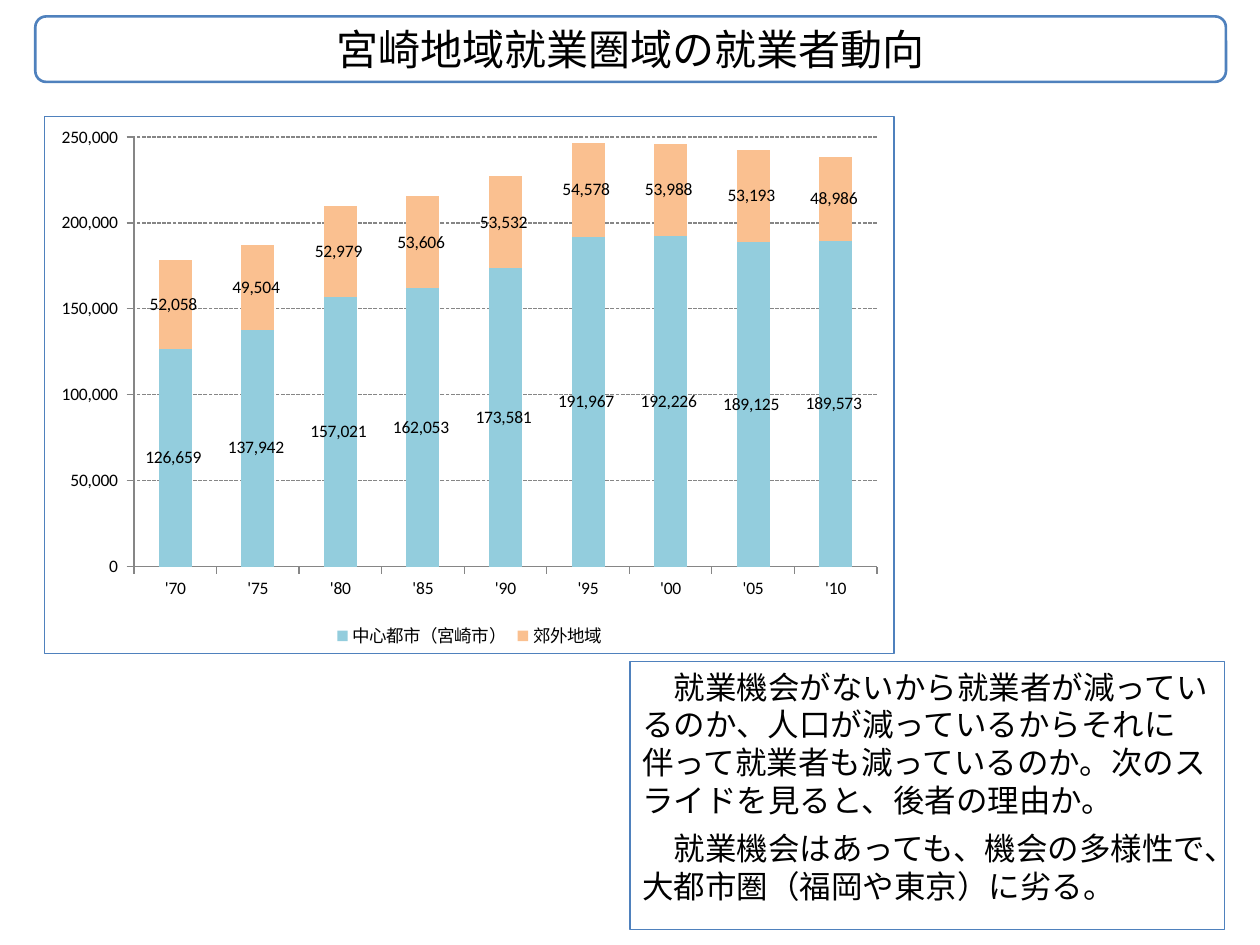
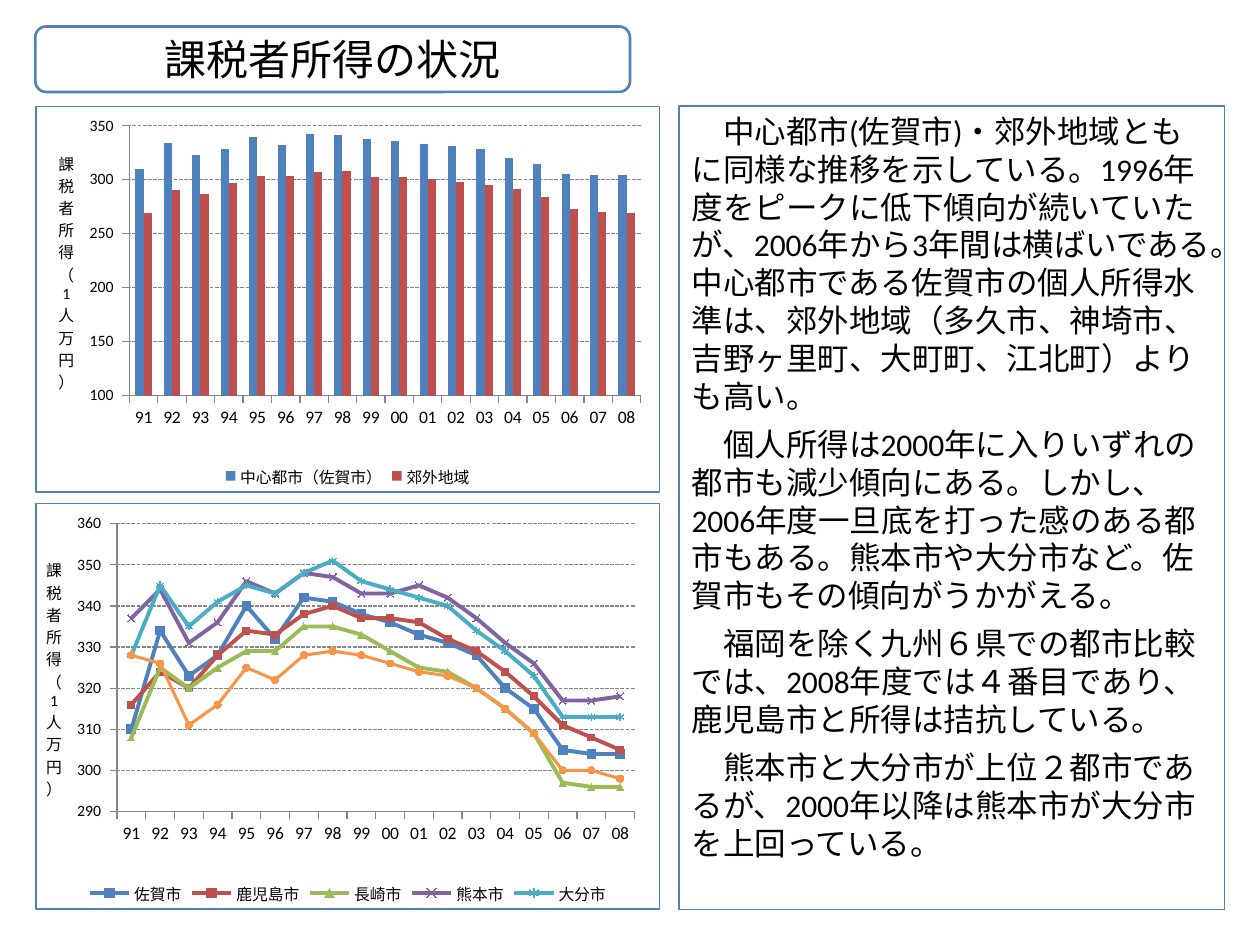
from dataclasses import dataclass

from lxml import etree
from pptx import Presentation
from pptx.chart.data import CategoryChartData
from pptx.dml.color import RGBColor
from pptx.enum.chart import XL_CHART_TYPE, XL_LEGEND_POSITION, XL_MARKER_STYLE, XL_TICK_MARK
from pptx.enum.dml import MSO_LINE
from pptx.enum.shapes import MSO_SHAPE
from pptx.enum.text import MSO_ANCHOR, MSO_AUTO_SIZE, PP_ALIGN
from pptx.oxml import parse_xml
from pptx.oxml.ns import nsdecls, qn
from pptx.util import Inches, Pt

STACKED = XL_CHART_TYPE.COLUMN_STACKED
CLUSTERED = XL_CHART_TYPE.COLUMN_CLUSTERED
LINES = XL_CHART_TYPE.LINE_MARKERS
OUTSIDE, NO_TICK = XL_TICK_MARK.OUTSIDE, XL_TICK_MARK.NONE
LEGEND_BOTTOM = XL_LEGEND_POSITION.BOTTOM
DASH = MSO_LINE.SQUARE_DOT
ROUNDED, SQUARED = MSO_SHAPE.ROUNDED_RECTANGLE, MSO_SHAPE.RECTANGLE
TOP, MIDDLE = MSO_ANCHOR.TOP, MSO_ANCHOR.MIDDLE
LEFT, CENTER = PP_ALIGN.LEFT, PP_ALIGN.CENTER
NO_AUTOFIT = MSO_AUTO_SIZE.NONE
SQUARE, TRIANGLE, CROSS, STAR, CIRCLE = (
    XL_MARKER_STYLE.SQUARE, XL_MARKER_STYLE.TRIANGLE, XL_MARKER_STYLE.X,
    XL_MARKER_STYLE.STAR, XL_MARKER_STYLE.CIRCLE)


@dataclass(frozen=True)
class Theme:
    font: str = "Calibri"
    text: str = "000000"
    paper: str = "FFFFFF"
    border: str = "4F81BD"
    grid: str = "868686"
    title_size: float = 24
    body_size: float = 18
    chart_size: float = 10
    small_size: float = 9
    title_line: float = 1.5
    thin_line: float = 0.75
    paragraph_gap: float = 6


THEME = Theme()

FISCAL_YEARS = [f"{year % 100:02d}" for year in range(1991, 2009)]
SAGA_INCOME = [310, 334, 323, 328, 340, 332, 342, 341, 338,
               336, 333, 331, 328, 320, 315, 305, 304, 304]
INCOME_AXIS = "課税者所得（1人万円）"

EMPLOYMENT = {
    "kind": STACKED,
    "at": (0.35, 0.92, 6.75, 4.27),
    "categories": [f"'{year % 100:02d}" for year in range(1970, 2011, 5)],
    "series": [
        ("中心都市（宮崎市）", "93CDDD",
         [126659, 137942, 157021, 162053, 173581, 191967, 192226, 189125, 189573]),
        ("郊外地域", "FAC090",
         [52058, 49504, 52979, 53606, 53532, 54578, 53988, 53193, 48986]),
    ],
    "scale": (0, 250000, 50000),
    "format": "#,##0_ ",
    "labels": True,
}
INCOME_BY_AREA = {
    "kind": CLUSTERED,
    "at": (0.28, 0.84, 4.96, 3.07),
    "categories": FISCAL_YEARS,
    "series": [
        ("中心都市（佐賀市）", "4F81BD", SAGA_INCOME),
        ("郊外地域", "C0504D",
         [269, 290, 287, 297, 303, 303, 307, 308, 302,
          302, 301, 298, 295, 291, 284, 273, 270, 269]),
    ],
    "scale": (100, 350, 50),
    "format": "0_ ",
    "axis_title": INCOME_AXIS,
    "plot": (0.15, 0.05, 0.82, 0.7),
}
INCOME_BY_CITY = {
    "kind": LINES,
    "at": (0.28, 3.99, 4.96, 3.23),
    "categories": FISCAL_YEARS,
    "series": [
        ("佐賀市", "4F81BD", SAGA_INCOME),
        ("鹿児島市", "C0504D",
         [316, 324, 320, 328, 334, 333, 338, 340, 337,
          337, 336, 332, 329, 324, 318, 311, 308, 305]),
        ("長崎市", "9BBB59",
         [308, 325, 320, 325, 329, 329, 335, 335, 333,
          329, 325, 324, 320, 315, 309, 297, 296, 296]),
        ("熊本市", "8064A2",
         [337, 344, 331, 336, 346, 343, 348, 347, 343,
          343, 345, 342, 337, 331, 326, 317, 317, 318]),
        ("大分市", "4BACC6",
         [328, 345, 335, 341, 345, 343, 348, 351, 346,
          344, 342, 340, 334, 329, 323, 313, 313, 313]),
        ("宮崎市", "F79646",
         [328, 326, 311, 316, 325, 322, 328, 329, 328,
          326, 324, 323, 320, 315, 309, 300, 300, 298]),
    ],
    "markers": [SQUARE, SQUARE, TRIANGLE, CROSS, STAR, CIRCLE],
    "line_widths": [2.25] * 5 + [1.75],
    "unlisted": 5,
    "scale": (290, 360, 10),
    "format": "0_ ",
    "axis_title": INCOME_AXIS,
    "plot": (0.13, 0.05, 0.83, 0.71),
}

SLIDES = [
    {
        "title": "宮崎地域就業圏域の就業者動向",
        "title_at": (0.28, 0.13, 9.45, 0.52),
        "comments": [
            "　就業機会がないから就業者が減っているのか、人口が減っているからそれに"
            "伴って就業者も減っているのか。次のスライドを見ると、後者の理由か。",
            "　就業機会はあっても、機会の多様性で、大都市圏（福岡や東京）に劣る。",
        ],
        "comments_at": (5, 5.25, 4.72, 2.13),
        "charts": [EMPLOYMENT],
    },
    {
        "title": "課税者所得の状況",
        "title_at": (0.28, 0.21, 4.72, 0.52),
        "comments": [
            "　中心都市(佐賀市)・郊外地域ともに同様な推移を示している。1996年度をピークに"
            "低下傾向が続いていたが、2006年から3年間は横ばいである。中心都市である佐賀市の"
            "個人所得水準は、郊外地域（多久市、神埼市、吉野ヶ里町、大町町、江北町）よりも高い。",
            "　個人所得は2000年に入りいずれの都市も減少傾向にある。しかし、2006年度一旦底を"
            "打った感のある都市もある。熊本市や大分市など。佐賀市もその傾向がうかがえる。",
            "　福岡を除く九州６県での都市比較では、2008年度では４番目であり、"
            "鹿児島市と所得は拮抗している。",
            "　熊本市と大分市が上位２都市であるが、2000年以降は熊本市が大分市を上回っている。",
        ],
        "comments_at": (5.39, 0.84, 4.33, 6.38),
        "charts": [INCOME_BY_AREA, INCOME_BY_CITY],
    },
]


def rgb(color):
    return RGBColor.from_string(color)


def draw_line(line, color, width):
    line.color.rgb = rgb(color)
    line.width = Pt(width)


def paint(item, fill, line, width):
    item.fill.solid()
    item.fill.fore_color.rgb = rgb(fill)
    draw_line(item.line, line, width)


def style_font(font, size):
    font.name = THEME.font
    font.size = Pt(size)
    font.bold = False
    font.color.rgb = rgb(THEME.text)


def write(paragraph, text, size, align):
    paragraph.alignment = align
    run = paragraph.add_run()
    run.text = text
    style_font(run.font, size)


def add_panel(slide, outline, at, line_width):
    panel = slide.shapes.add_shape(outline, *map(Inches, at))
    panel.shadow.inherit = False
    paint(panel, THEME.paper, THEME.border, line_width)
    return panel


def add_title(slide, text, at):
    title = slide.shapes.title
    band = add_panel(slide, ROUNDED, at, THEME.title_line)
    title._element.addprevious(band._element)
    title.left, title.top, title.width, title.height = map(Inches, at)
    frame = title.text_frame
    frame.auto_size = NO_AUTOFIT
    frame.vertical_anchor = MIDDLE
    write(frame.paragraphs[0], text, THEME.title_size, CENTER)


def add_comments(slide, comments, at):
    frame = add_panel(slide, SQUARED, at, THEME.thin_line).text_frame
    frame.word_wrap = True
    frame.vertical_anchor = TOP
    for index, comment in enumerate(comments):
        paragraph = frame.add_paragraph() if index else frame.paragraphs[0]
        paragraph.space_after = Pt(THEME.paragraph_gap)
        write(paragraph, comment, THEME.body_size, LEFT)


def frame_chart(chart):
    chart._chartSpace.find(qn("c:chart")).addnext(parse_xml(
        f'<c:spPr {nsdecls("c", "a")}>'
        f'<a:solidFill><a:srgbClr val="{THEME.paper}"/></a:solidFill>'
        f'<a:ln w="{Pt(THEME.thin_line)}"><a:solidFill>'
        f'<a:srgbClr val="{THEME.border}"/></a:solidFill></a:ln></c:spPr>'))


def place_plot(chart, box):
    plot_area = chart._chartSpace.find(".//" + qn("c:plotArea"))
    for layout in plot_area.findall(qn("c:layout")):
        plot_area.remove(layout)
    layout = parse_xml(f'<c:layout {nsdecls("c")}><c:manualLayout/></c:layout>')
    settings = [("layoutTarget", "inner"), ("xMode", "edge"), ("yMode", "edge")]
    settings += zip("xywh", box)
    for tag, value in settings:
        etree.SubElement(layout[0], qn(f"c:{tag}")).set("val", str(value))
    plot_area.insert(0, layout)


def style_axes(chart, content):
    for axis in (chart.category_axis, chart.value_axis):
        axis.major_tick_mark = OUTSIDE
        axis.minor_tick_mark = NO_TICK
        draw_line(axis.format.line, THEME.grid, THEME.thin_line)
    values = chart.value_axis
    values.minimum_scale, values.maximum_scale, values.major_unit = content["scale"]
    values.tick_labels.number_format = content["format"]
    values.tick_labels.number_format_is_linked = False
    values.has_major_gridlines = True
    gridline = values.major_gridlines.format.line
    draw_line(gridline, THEME.grid, THEME.thin_line)
    gridline.dash_style = DASH
    if "axis_title" in content:
        style_font(values.tick_labels.font, THEME.small_size)
        frame = values.axis_title.text_frame
        write(frame.paragraphs[0], content["axis_title"], THEME.small_size, CENTER)
        body = frame._txBody.find(qn("a:bodyPr"))
        body.set("rot", "0")
        body.set("vert", "wordArtVertRtl")


def style_series(chart, content):
    for index, (series, (_, color, _)) in enumerate(zip(chart.plots[0].series, content["series"])):
        if content["kind"] == LINES:
            series.smooth = False
            draw_line(series.format.line, color, content["line_widths"][index])
            marker = series.marker
            marker.style = content["markers"][index]
            marker.size = 4 if index else 5
            paint(marker.format, color, color, THEME.thin_line)
        else:
            series.format.fill.solid()
            series.format.fill.fore_color.rgb = rgb(color)
        if content.get("labels"):
            labels = series.data_labels
            labels.show_value = True
            labels.number_format = content["format"]
            labels.number_format_is_linked = False
            style_font(labels.font, THEME.chart_size)


def add_legend(chart, content):
    chart.has_legend = True
    legend = chart.legend
    legend.position = LEGEND_BOTTOM
    legend.include_in_layout = False
    style_font(legend.font, THEME.small_size if "axis_title" in content else THEME.chart_size)
    if "unlisted" in content:
        legend._element.find(qn("c:legendPos")).addnext(parse_xml(
            f'<c:legendEntry {nsdecls("c")}><c:idx val="{content["unlisted"]}"/>'
            '<c:delete val="1"/></c:legendEntry>'))


def add_chart(slide, content):
    data = CategoryChartData()
    data.categories = content["categories"]
    for name, _, values in content["series"]:
        data.add_series(name, values)
    chart = slide.shapes.add_chart(content["kind"], *map(Inches, content["at"]), data).chart
    chart.has_title = False
    style_font(chart.font, THEME.chart_size)
    frame_chart(chart)
    plot = chart.plots[0]
    plot.vary_by_categories = False
    if content["kind"] != LINES:
        plot.gap_width = 150
        plot.overlap = 100 if content["kind"] == STACKED else 0
    style_axes(chart, content)
    style_series(chart, content)
    add_legend(chart, content)
    if "plot" in content:
        place_plot(chart, content["plot"])


def main():
    deck = Presentation()
    deck.slide_width, deck.slide_height = Inches(10), Inches(7.5)
    for content in SLIDES:
        slide = deck.slides.add_slide(deck.slide_layouts[5])
        add_title(slide, content["title"], content["title_at"])
        add_comments(slide, content["comments"], content["comments_at"])
        for chart in content["charts"]:
            add_chart(slide, chart)
    deck.save("out.pptx")


if __name__ == "__main__":
    main()
